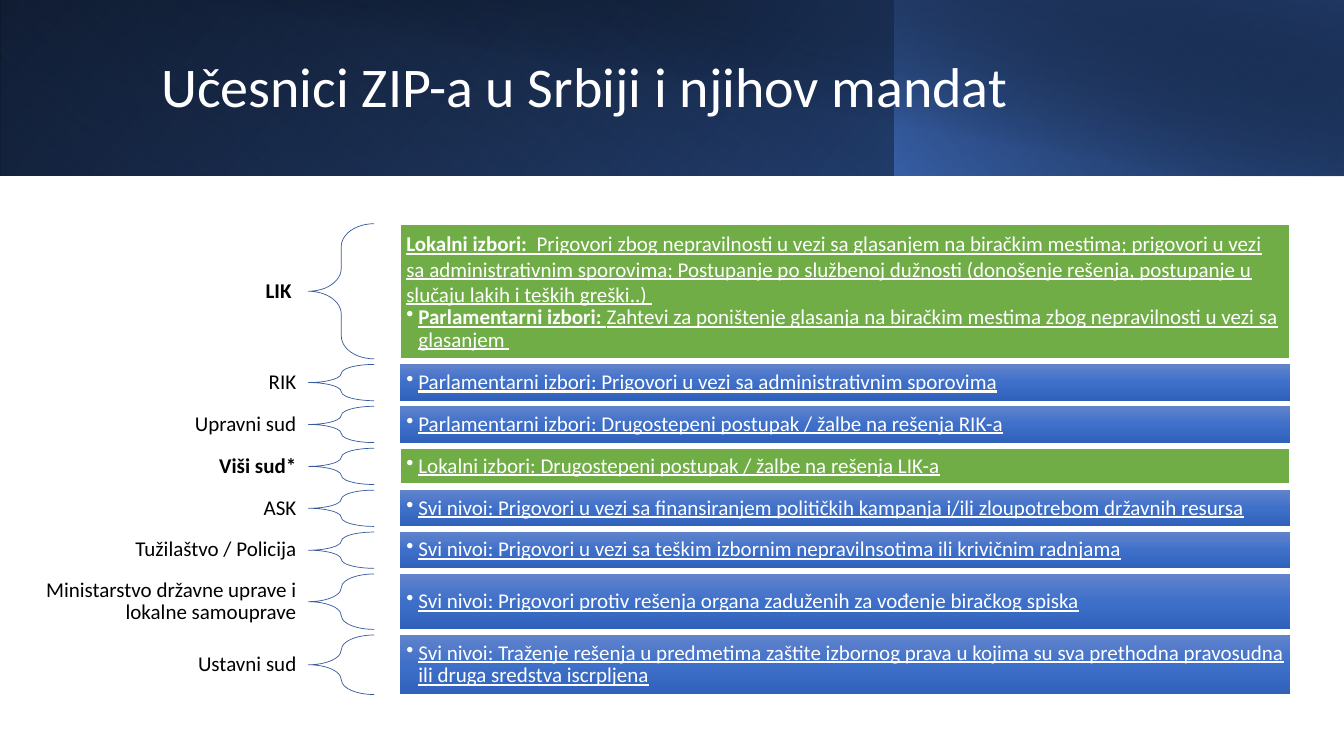
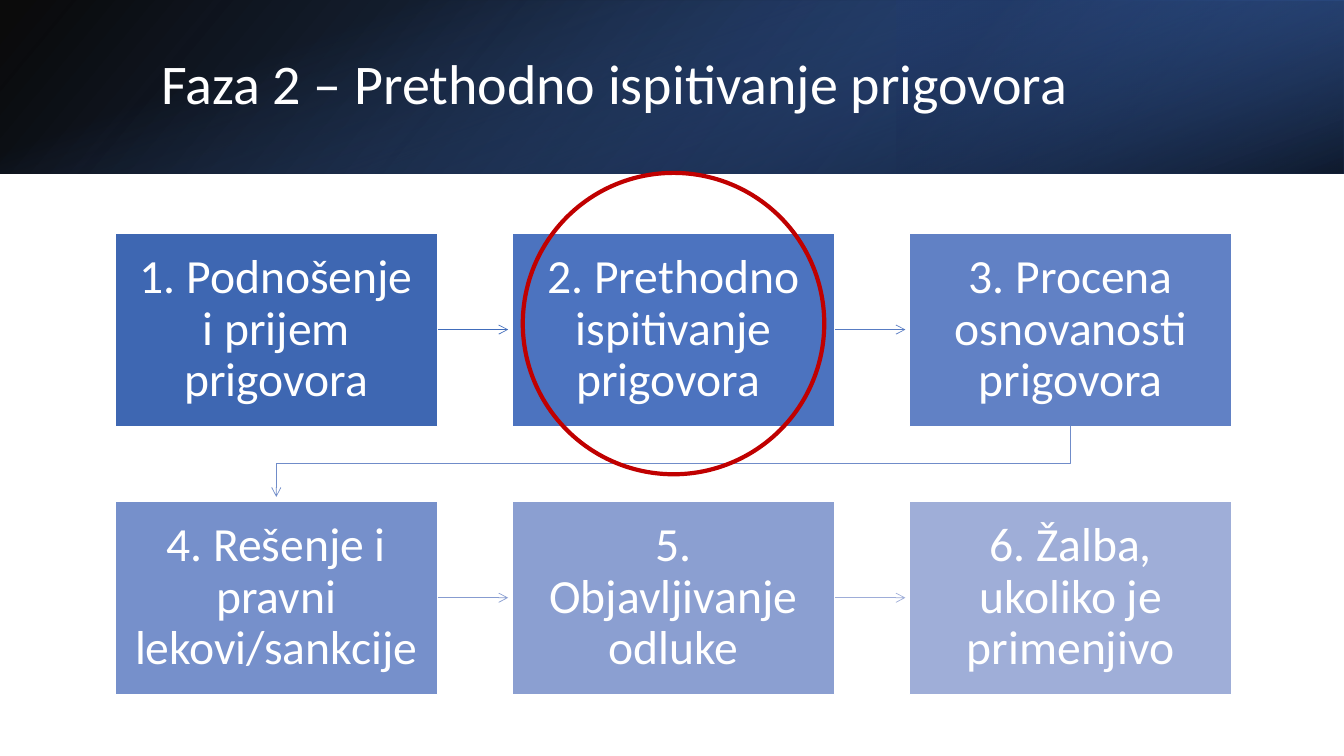
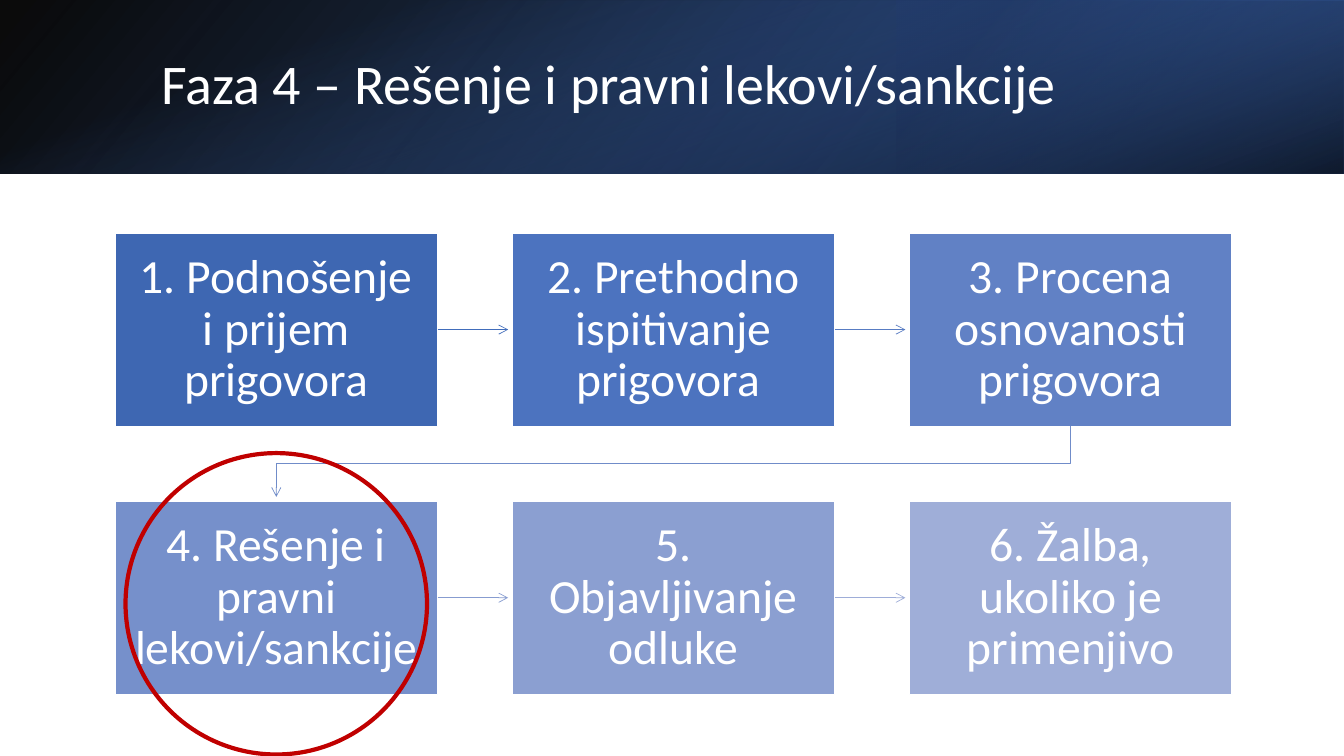
from pptx import Presentation
from pptx.dml.color import RGBColor
from pptx.enum.shapes import MSO_CONNECTOR, MSO_SHAPE
from pptx.enum.text import MSO_ANCHOR, MSO_AUTO_SIZE, PP_ALIGN
from pptx.oxml import parse_xml
from pptx.oxml.ns import nsdecls, qn
from pptx.util import Inches, Pt

RECTANGLE = MSO_SHAPE.RECTANGLE
ELLIPSE = MSO_SHAPE.OVAL
BRACE = MSO_SHAPE.LEFT_BRACE
STRAIGHT = MSO_CONNECTOR.STRAIGHT
MIDDLE = MSO_ANCHOR.MIDDLE
NO_AUTOFIT = MSO_AUTO_SIZE.NONE
LEFT, CENTER, RIGHT = PP_ALIGN.LEFT, PP_ALIGN.CENTER, PP_ALIGN.RIGHT

SLIDE_WIDTH, SLIDE_HEIGHT = 13.33, 7.5
TITLE_ONLY = 5
FONT = "Calibri"
BLACK, WHITE = "000000", "FFFFFF"
NAVY, BLUE, DEEP_BLUE = "203864", "4472C4", "2F5597"
GREEN, RED, BRACE_BLUE = "70AD47", "C00000", "365B9D"
ROW_STOPS = [(0, "6183CB", 100), (50, "3E70CA", 100), (100, "3062BB", 100)]

MANDATE_TITLE_BOX = (1.5, 0.32, 10.82, 1.13)
PHASE_TITLE_BOX = (1.5, 0.38, 10.98, 0.96)
MANDATE_AREA = (0, 2.22, 12.8, 4.67)
STEP_AREA = (1.14, 2.31, 11.08, 4.58)
STEP_GAP = 0.74
ARROW_CLEARANCE = 0.04
RING_SIZE = 2.99

# box, rotation, flipped, gradient stops (position, colour, opacity), angle
MANDATE_BANDS = [
    ((0, 0, 13.33, 1.74), 0, True, [(0, BLACK, 100), (100, DEEP_BLUE, 100)], 140),
    ((0, 0, 8.88, 1.74), 180, True, [(20, BLUE, 0), (100, NAVY, 55)], 230),
    ((8.87, 0, 4.46, 1.74), 0, True, [(0, BLUE, 66), (100, BLACK, 30)], 220),
    ((0.5, 0, 12.83, 1.75), 0, False, [(50, BLACK, 0), (99, NAVY, 52)], 280),
]
PHASE_BANDS = [
    ((0, 0, 13.33, 1.72), 0, True, [(0, BLACK, 96), (100, DEEP_BLUE, 100)], 140),
    ((8.89, 0, 4.44, 1.72), 180, True, [(19, NAVY, 68), (100, BLUE, 79)], 320),
    ((5.8, -5.8, 1.72, 13.33), 90, False, [(23, BLUE, 0), (99, BLACK, 74)], 340),
]

LOCAL_DUTIES = (
    "Prigovori zbog nepravilnosti u vezi sa glasanjem na biračkim mestima; "
    "prigovori u vezi sa administrativnim sporovima; Postupanje po službenoj "
    "dužnosti (donošenje rešenja, postupanje u slučaju lakih i teških greški..) "
)
PARLIAMENT_DUTIES = (
    "Zahtevi za poništenje glasanja na biračkim mestima zbog nepravilnosti "
    "u vezi sa glasanjem "
)
MANDATES = [
    ("LIK ", 1.34, True, [
        [("Lokalni izbori:  ", True), (LOCAL_DUTIES, False)],
        [("Parlamentarni izbori: ", True), (PARLIAMENT_DUTIES, False)],
    ]),
    ("RIK", 0.36, False, [[(
        "Parlamentarni izbori: Prigovori u vezi sa administrativnim sporovima", False)]]),
    ("Upravni sud", 0.36, False, [[(
        "Parlamentarni izbori: Drugostepeni postupak / žalbe na rešenja RIK-a", False)]]),
    ("Viši sud*", 0.36, True, [[(
        "Lokalni izbori: Drugostepeni postupak / žalbe na rešenja LIK-a", False)]]),
    ("ASK", 0.36, False, [[(
        "Svi nivoi: Prigovori u vezi sa finansiranjem političkih kampanja "
        "i/ili zloupotrebom državnih resursa", False)]]),
    ("Tužilaštvo / Policija", 0.36, False, [[(
        "Svi nivoi: Prigovori u vezi sa teškim izbornim nepravilnsotima "
        "ili krivičnim radnjama", False)]]),
    ("Ministarstvo državne uprave i lokalne samouprave", 0.55, False, [[(
        "Svi nivoi: Prigovori protiv rešenja organa zaduženih za vođenje "
        "biračkog spiska", False)]]),
    ("Ustavni sud", 0.59, False, [[(
        "Svi nivoi: Traženje rešenja u predmetima zaštite izbornog prava u kojima "
        "su sva prethodna pravosudna ili druga sredstva iscrpljena", False)]]),
]

STEPS = [
    ("1. Podnošenje i prijem prigovora", "3E67B2", "416DBB"),
    ("2. Prethodno ispitivanje prigovora ", "4C73BF", "587CC3"),
    ("3. Procena osnovanosti prigovora", "6181C5", "708CC9"),
    ("4. Rešenje i pravni lekovi/sankcije", "7690CB", "879CD0"),
    ("5. Objavljivanje odluke", "8B9FD1", "9EADD8"),
    ("6. Žalba, ukoliko je primenjivo", "9FAED8", None),
]
PHASES = [
    ("Faza 2 – Prethodno ispitivanje prigovora", 1, -0.06),
    ("Faza 4 – Rešenje i pravni lekovi/sankcije", 3, 0.06),
]


def color(value):
    return RGBColor.from_string(value)


def inches(box):
    return [Inches(length) for length in box]


def set_line(shape, line_color, width):
    shape.line.color.rgb = color(line_color)
    shape.line.width = Pt(width)


def add_shape(slide, kind, box, fill=None, line=None, width=1):
    shape = slide.shapes.add_shape(kind, *inches(box))
    shape.shadow.inherit = False
    if fill:
        shape.fill.solid()
        shape.fill.fore_color.rgb = color(fill)
    else:
        shape.fill.background()
    if line:
        set_line(shape, line, width)
    else:
        shape.line.fill.background()
    return shape


def set_gradient(shape, stops, angle):
    shape.fill.gradient()
    properties = shape.element.spPr
    stop_xml = "".join(
        f'<a:gs pos="{position * 1000}"><a:srgbClr val="{value}">'
        f'<a:alpha val="{opacity * 1000}"/></a:srgbClr></a:gs>'
        for position, value, opacity in stops
    )
    gradient = parse_xml(
        f'<a:gradFill {nsdecls("a")} rotWithShape="1"><a:gsLst>{stop_xml}</a:gsLst>'
        f'<a:lin ang="{angle * 60000}" scaled="0"/></a:gradFill>'
    )
    properties.replace(properties.find(qn("a:gradFill")), gradient)


def set_frame(text_frame, horizontal, vertical):
    text_frame.word_wrap = True
    text_frame.auto_size = NO_AUTOFIT
    text_frame.vertical_anchor = MIDDLE
    text_frame.margin_left = text_frame.margin_right = Inches(horizontal)
    text_frame.margin_top = text_frame.margin_bottom = Inches(vertical)


def format_paragraph(paragraph, size, font_color, alignment=LEFT, spacing=0.9):
    paragraph.alignment = alignment
    paragraph.line_spacing = spacing
    for run in paragraph.runs:
        run.font.name = FONT
        run.font.size = Pt(size)
        run.font.color.rgb = color(font_color)


def add_bullet(paragraph):
    properties = paragraph._p.get_or_add_pPr()
    properties.set("marL", str(Inches(0.12)))
    properties.set("indent", str(-Inches(0.12)))
    properties.append(parse_xml(f'<a:buChar {nsdecls("a")} char="•"/>'))


def add_header(presentation, title_text, title_box, bands):
    slide = presentation.slides.add_slide(presentation.slide_layouts[TITLE_ONLY])
    for box, rotation, flipped, stops, angle in bands:
        band = add_shape(slide, RECTANGLE, box)
        band.rotation = rotation
        if flipped:
            band.element.spPr.xfrm.set("flipH", "1")
        set_gradient(band, stops, angle)
    title = slide.shapes.title
    title.left, title.top, title.width, title.height = inches(title_box)
    title.text_frame.text = title_text
    set_frame(title.text_frame, 0.1, 0.05)
    format_paragraph(title.text_frame.paragraphs[0], 40, WHITE)
    slide.shapes.element.append(title.element)
    return slide


def add_mandate_row(slide, box, label_text, local, duties):
    left, top, width, height = box
    label_width, brace_width, duty_left = 3.06, 0.65, 3.97

    label = slide.shapes.add_textbox(*inches((left, top, label_width, height)))
    label.text_frame.text = label_text
    set_frame(label.text_frame, 0.12, 0.04)
    format_paragraph(label.text_frame.paragraphs[0], 15, BLACK, RIGHT)
    label.text_frame.paragraphs[0].runs[0].font.bold = local

    brace_box = (left + label_width, top, brace_width, height)
    brace = add_shape(slide, BRACE, brace_box, line=BRACE_BLUE, width=0.5)
    brace.adjustments[0] = 0.35
    brace.adjustments[1] = 0.5

    duty_box = (left + duty_left, top, width - duty_left, height)
    if local:
        panel = add_shape(slide, RECTANGLE, duty_box, GREEN, WHITE, 1.5)
    else:
        panel = add_shape(slide, RECTANGLE, duty_box)
        set_gradient(panel, ROW_STOPS, 90)
    frame = panel.text_frame
    set_frame(frame, 0.06, 0.06)
    for index, parts in enumerate(duties):
        paragraph = frame.add_paragraph() if index else frame.paragraphs[0]
        for text, bold in parts:
            run = paragraph.add_run()
            run.text = text
            run.font.bold = bold
            run.font.underline = True
        is_intro = index < len(duties) - 1
        format_paragraph(paragraph, 15, WHITE, spacing=1.0 if is_intro else 0.9)
        if not is_intro:
            add_bullet(paragraph)


def add_mandates(slide, area):
    left, top, width, height = area
    gap = (height - sum(row[1] for row in MANDATES)) / (len(MANDATES) - 1)
    for label, row_height, local, duties in MANDATES:
        add_mandate_row(slide, (left, top, width, row_height), label, local, duties)
        top += row_height + gap


def style_arrow(arrow, line_color):
    set_line(arrow, line_color, 0.5)
    arrow.line._get_or_add_ln().append(
        parse_xml(f'<a:tailEnd {nsdecls("a")} type="arrow"/>')
    )


def add_straight_arrow(slide, start, end, line_color):
    x, y = start.left + start.width, start.top + start.height // 2
    end_x = end.left - Inches(ARROW_CLEARANCE)
    arrow = slide.shapes.add_connector(STRAIGHT, x, y, end_x, y)
    arrow.begin_connect(start, 3)
    arrow.element.spPr.append(parse_xml(f'<a:effectLst {nsdecls("a")}/>'))
    style_arrow(arrow, line_color)


def add_return_arrow(slide, start, end, line_color):
    start_x, start_y = start.left + start.width // 2, start.top + start.height
    end_x, end_y = end.left + end.width // 2, end.top - Inches(ARROW_CLEARANCE)
    turn_y = (start_y + end.top) // 2
    builder = slide.shapes.build_freeform(start_x, start_y)
    builder.add_line_segments(
        [(start_x, turn_y), (end_x, turn_y), (end_x, end_y)], close=False
    )
    arrow = builder.convert_to_shape()
    arrow.shadow.inherit = False
    arrow.fill.background()
    style_arrow(arrow, line_color)


def add_steps(slide, area, highlighted, ring_shift):
    left, top, width, height = area
    columns, rows = 3, 2
    box_width = (width - STEP_GAP * (columns - 1)) / columns
    box_height = (height - STEP_GAP * (rows - 1)) / rows
    boxes = []
    for index, (text, fill, _) in enumerate(STEPS):
        row, column = divmod(index, columns)
        x = left + column * (box_width + STEP_GAP)
        y = top + row * (box_height + STEP_GAP)
        box = add_shape(slide, RECTANGLE, (x, y, box_width, box_height), fill, WHITE)
        box.text_frame.text = text
        set_frame(box.text_frame, 0.16, 0.16)
        format_paragraph(box.text_frame.paragraphs[0], 34, WHITE, CENTER)
        boxes.append(box)

    for index, (start, end) in enumerate(zip(boxes, boxes[1:])):
        add_arrow = add_straight_arrow if start.top == end.top else add_return_arrow
        add_arrow(slide, start, end, STEPS[index][2])

    target = boxes[highlighted]
    ring_left = target.left.inches + (box_width - RING_SIZE) / 2
    ring_top = target.top.inches + (box_height - RING_SIZE) / 2 + ring_shift
    add_shape(slide, ELLIPSE, (ring_left, ring_top, RING_SIZE, RING_SIZE),
              line=RED, width=3)


def main():
    presentation = Presentation()
    presentation.slide_width = Inches(SLIDE_WIDTH)
    presentation.slide_height = Inches(SLIDE_HEIGHT)

    slide = add_header(presentation, "Učesnici ZIP-a u Srbiji i njihov mandat",
                       MANDATE_TITLE_BOX, MANDATE_BANDS)
    add_mandates(slide, MANDATE_AREA)

    for title, highlighted, ring_shift in PHASES:
        slide = add_header(presentation, title, PHASE_TITLE_BOX, PHASE_BANDS)
        add_steps(slide, STEP_AREA, highlighted, ring_shift)

    presentation.save("out.pptx")


if __name__ == "__main__":
    main()
